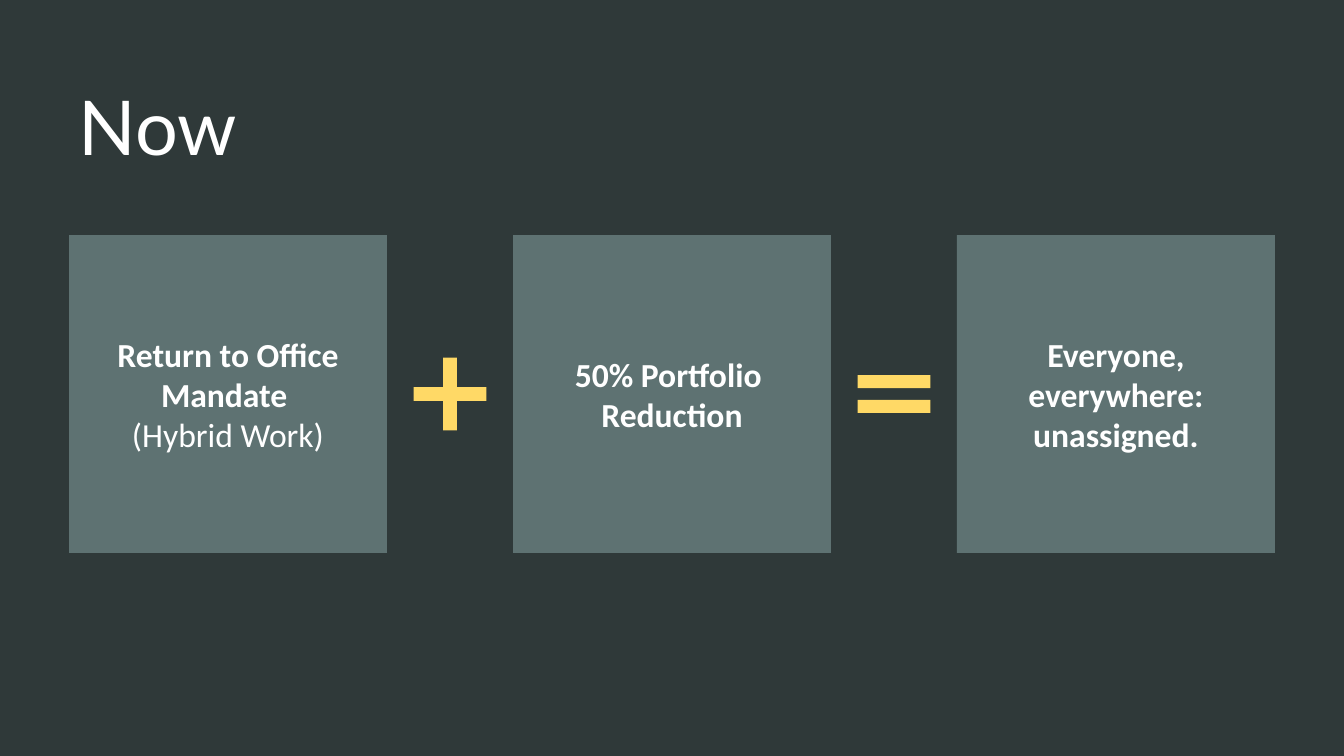
from dataclasses import dataclass

from pptx import Presentation
from pptx.dml.color import RGBColor
from pptx.enum.shapes import MSO_SHAPE
from pptx.enum.text import MSO_ANCHOR, PP_ALIGN
from pptx.util import Pt

# Content: each card is a list of (text, bold) paragraphs
TITLE = "Now"
CARDS = [
    [("Return to Office Mandate ", True), ("(Hybrid Work)", False)],
    [("50% Portfolio ", True), ("Reduction", True)],
    [("Everyone, everywhere: unassigned.", True)],
]
OPERATORS = [
    (MSO_SHAPE.MATH_PLUS, [0.14]),
    (MSO_SHAPE.MATH_EQUAL, [0.13, 0.12]),
]


@dataclass(frozen=True)
class Theme:
    background: RGBColor = RGBColor.from_string("2F3939")
    card: RGBColor = RGBColor.from_string("5E7272")
    operator: RGBColor = RGBColor.from_string("FFD966")
    text: RGBColor = RGBColor.from_string("FFFFFF")
    title_font: str = "Lato"
    body_font: str = "Calibri"
    title_size: Pt = Pt(54)
    body_size: Pt = Pt(24)


THEME = Theme()

# Layout in px
WIDTH, HEIGHT = 1344, 756
MARGIN = 69
TITLE_TOP, TITLE_W, TITLE_H = 75, 787, 102
CARD_TOP, CARD = 235, 318
OPERATOR = 99
GAP = (WIDTH - 2 * MARGIN - len(CARDS) * CARD) / (len(CARDS) - 1)


def px(n):
    return round(n * 914400 / 100.8)


def style(p, name, size, bold=False):
    p.font.name, p.font.size, p.font.bold = name, size, bold
    p.font.color.rgb = THEME.text


def add_square(s, kind, x, y, side, color):
    sp = s.shapes.add_shape(kind, px(x), px(y), px(side), px(side))
    sp.shadow.inherit = False
    sp.fill.solid()
    sp.fill.fore_color.rgb = color
    sp.line.fill.background()
    return sp


def add_title(s):
    sp = s.shapes.add_textbox(px(MARGIN), px(TITLE_TOP), px(TITLE_W), px(TITLE_H))
    tf = sp.text_frame
    tf.word_wrap = True
    p = tf.paragraphs[0]
    p.text = TITLE
    style(p, THEME.title_font, THEME.title_size)


def add_card(s, x, lines):
    sp = add_square(s, MSO_SHAPE.RECTANGLE, x, CARD_TOP, CARD, THEME.card)
    tf = sp.text_frame
    tf.word_wrap = True
    tf.vertical_anchor = MSO_ANCHOR.MIDDLE
    for i, (text, bold) in enumerate(lines):
        p = tf.add_paragraph() if i else tf.paragraphs[0]
        p.text = text
        p.alignment = PP_ALIGN.CENTER
        style(p, THEME.body_font, THEME.body_size, bold)


def main():
    prs = Presentation()
    prs.slide_width, prs.slide_height = px(WIDTH), px(HEIGHT)
    s = prs.slides.add_slide(prs.slide_layouts[6])
    s.background.fill.solid()
    s.background.fill.fore_color.rgb = THEME.background

    add_title(s)

    # Equation cards
    for i, lines in enumerate(CARDS):
        add_card(s, MARGIN + i * (CARD + GAP), lines)

    # Operators centred in the gaps
    y = CARD_TOP + (CARD - OPERATOR) / 2
    for i, (kind, adjustments) in enumerate(OPERATORS):
        x = MARGIN + CARD + i * (CARD + GAP) + (GAP - OPERATOR) / 2
        sp = add_square(s, kind, x, y, OPERATOR, THEME.operator)
        for j, value in enumerate(adjustments):
            sp.adjustments[j] = value

    prs.save("out.pptx")


if __name__ == "__main__":
    main()
